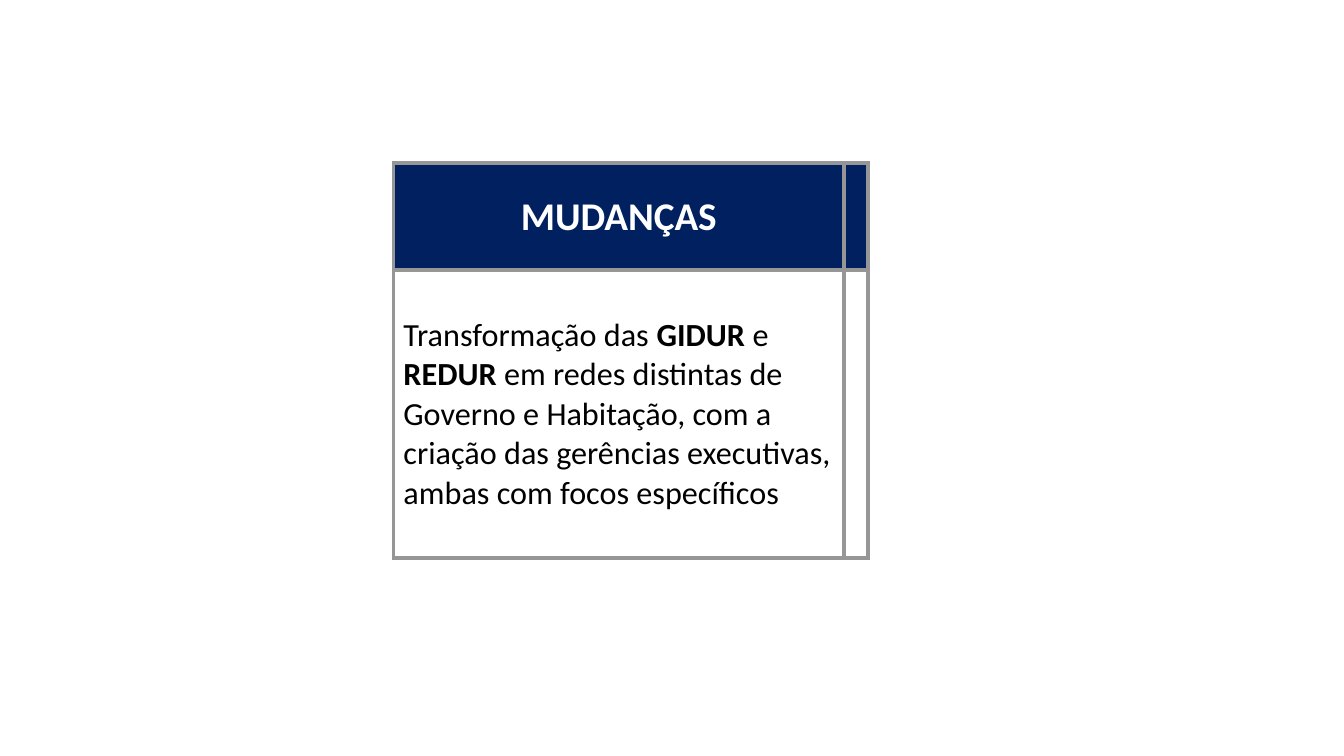
from lxml import etree
from pptx import Presentation
from pptx.dml.color import RGBColor
from pptx.enum.text import MSO_ANCHOR, PP_ALIGN
from pptx.oxml.ns import qn
from pptx.util import Pt

NAVY = RGBColor(0x00, 0x20, 0x60)
WHITE = RGBColor(0xFF, 0xFF, 0xFF)
BLACK = RGBColor(0x00, 0x00, 0x00)
GREY = RGBColor(0x96, 0x96, 0x96)
MIDDLE = MSO_ANCHOR.MIDDLE
CENTER = PP_ALIGN.CENTER
LEFT = PP_ALIGN.LEFT

FONT = "Calibri"
BORDER_WIDTH = Pt(3)
COLUMN_WIDTHS = (322, 16.5)
ROW_HEIGHTS = (76.5, 205.5)
ROW_FILLS = (NAVY, WHITE)
HEADING = [("MUDANÇAS", True)]
CHANGE = [
    ("Transformação das ", False),
    ("GIDUR", True),
    (" e ", False),
    ("REDUR ", True),
    ("em redes distintas de Governo e Habitação, com a criação das "
     "gerências executivas, ambas com focos específicos", False),
]


def style_cell(cell, fill_color):
    """Give a cell grey borders on all sides and a solid fill."""
    properties = cell._tc.get_or_add_tcPr()
    for side in ("a:lnL", "a:lnR", "a:lnT", "a:lnB"):
        line = etree.SubElement(properties, qn(side), w=str(BORDER_WIDTH))
        fill = etree.SubElement(line, qn("a:solidFill"))
        etree.SubElement(fill, qn("a:srgbClr"), val=str(GREY))
    cell.fill.solid()
    cell.fill.fore_color.rgb = fill_color
    cell.vertical_anchor = MIDDLE


def write_cell(cell, pieces, size, color, alignment):
    """Write pieces of plain and bold text into a cell."""
    paragraph = cell.text_frame.paragraphs[0]
    paragraph.alignment = alignment
    for text, bold in pieces:
        run = paragraph.add_run()
        run.text = text
        run.font.name = FONT
        run.font.size = Pt(size)
        run.font.bold = bold
        run.font.color.rgb = color


def add_changes_table(slide):
    """Add the bordered table of changes."""
    shape = slide.shapes.add_table(
        len(ROW_HEIGHTS), len(COLUMN_WIDTHS), Pt(281), Pt(116.5),
        Pt(sum(COLUMN_WIDTHS)), Pt(sum(ROW_HEIGHTS)))
    table = shape.table
    for column, width in zip(table.columns, COLUMN_WIDTHS):
        column.width = Pt(width)
    for row, height, fill_color in zip(table.rows, ROW_HEIGHTS, ROW_FILLS):
        row.height = Pt(height)
        for cell in row.cells:
            style_cell(cell, fill_color)
    write_cell(table.cell(0, 0), HEADING, 28, WHITE, CENTER)
    write_cell(table.cell(1, 0), CHANGE, 23, BLACK, LEFT)


def main():
    """Build and save the presentation."""
    presentation = Presentation()
    presentation.slide_width = Pt(960)
    presentation.slide_height = Pt(540)
    slide = presentation.slides.add_slide(presentation.slide_layouts[6])
    add_changes_table(slide)
    presentation.save("out.pptx")


if __name__ == "__main__":
    main()
